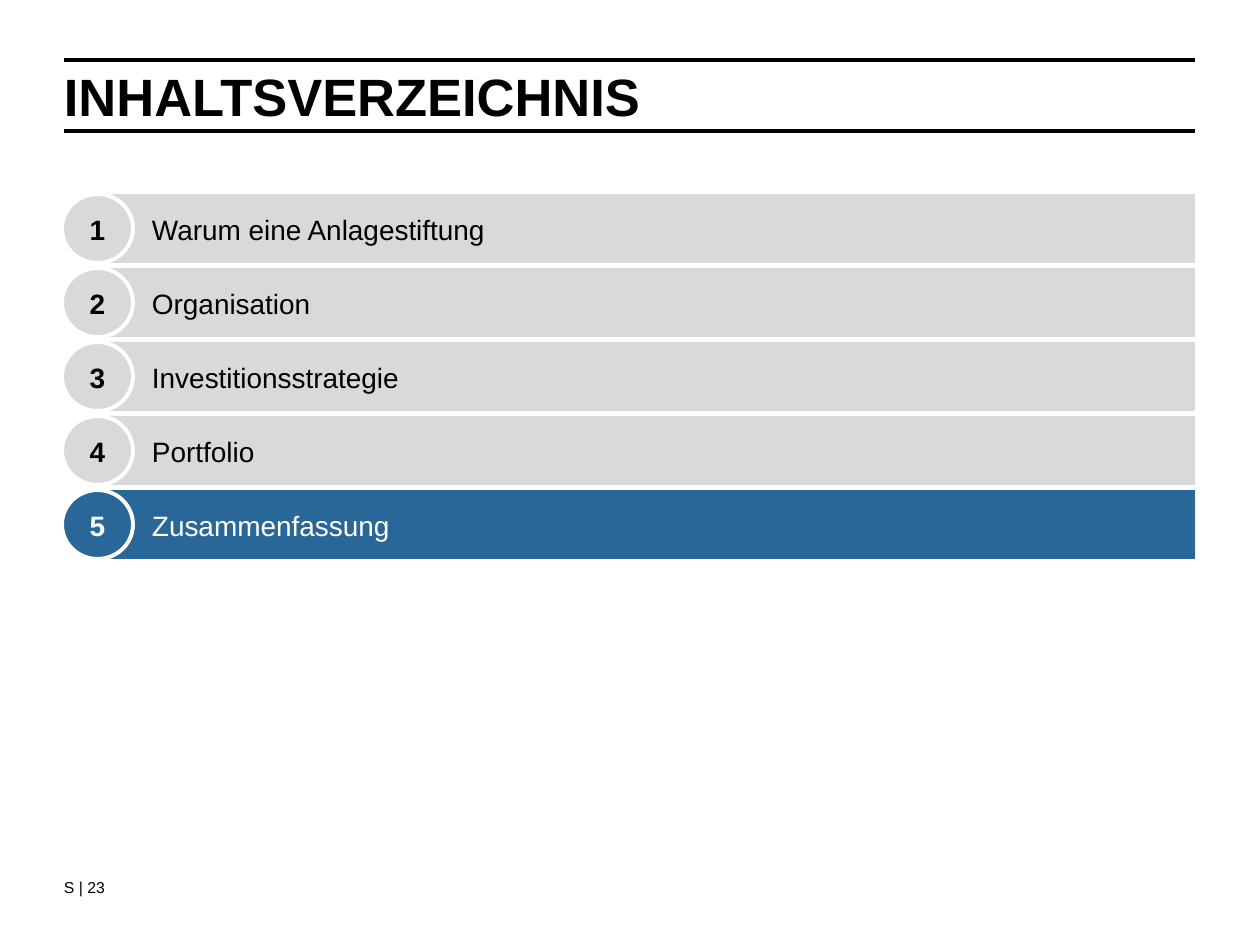
import pptx
import pptx.util
import pptx.dml.color
import pptx.enum.shapes
import pptx.enum.text
import pptx.oxml.ns
from lxml import etree

SCALE = 914400 / 126
COLORS = {"black": "000000", "white": "FFFFFF", "grey": "D9D9D9", "blue": "296799"}
SHAPES = pptx.enum.shapes.MSO_SHAPE
ALIGN = pptx.enum.text.PP_ALIGN
ANCHOR = pptx.enum.text.MSO_ANCHOR


def px(*lengths):
    return [pptx.util.Emu(round(length * SCALE)) for length in lengths]


def write(shape, text, size, color, bold, insets, spacing, align, anchor):
    frame = shape.text_frame
    frame.word_wrap = True
    frame.vertical_anchor = anchor
    frame.margin_left, frame.margin_top, frame.margin_right, frame.margin_bottom = px(*insets)
    paragraph = frame.paragraphs[0]
    paragraph.alignment = align
    paragraph.line_spacing = spacing
    run = paragraph.add_run()
    run.text = text
    run.font.name = "Arial"
    run.font.size = pptx.util.Pt(size)
    run.font.bold = bold
    run.font.color.rgb = pptx.dml.color.RGBColor.from_string(COLORS[color])


deck = pptx.Presentation()
deck.slide_width, deck.slide_height = px(1260, 945)
slide = deck.slides.add_slide(deck.slide_layouts[6])

for rule_y in (60, 131):
    rule = slide.shapes.add_connector(
        pptx.enum.shapes.MSO_CONNECTOR.STRAIGHT, *px(64, rule_y, 1195, rule_y))
    rule.line.width = pptx.util.Pt(2.8)
    rule.line.color.rgb = pptx.dml.color.RGBColor.from_string(COLORS["black"])
    etree.SubElement(rule._element.spPr, pptx.oxml.ns.qn("a:effectLst"))

heading = slide.shapes.add_textbox(*px(64, 71, 1131, 49))
write(heading, "INHALTSVERZEICHNIS", 30, "black", True, (0, 4, 0, 0),
      pptx.util.Pt(30), ALIGN.LEFT, ANCHOR.TOP)

page_number = slide.shapes.add_textbox(*px(64, 874, 95, 35))
write(page_number, "S | 23", 9, "black", False, (0, 3, 0, 0),
      1.06, ALIGN.LEFT, ANCHOR.TOP)

chapters = ["Warum eine Anlagestiftung", "Organisation", "Investitionsstrategie",
            "Portfolio", "Zusammenfassung"]
current_chapter = 5
first_top, pitch, row_height = 194, 74, 69

for number, chapter in enumerate(chapters, start=1):
    top = first_top + (number - 1) * pitch
    is_current = number == current_chapter
    fill, ink = ("blue", "white") if is_current else ("grey", "black")

    bar = slide.shapes.add_shape(SHAPES.RECTANGLE, *px(98, top, 1097, row_height))
    bar.line.fill.background()
    write(bar, chapter, 16, ink, False, (54, 5, 5, 5), 1.06, ALIGN.LEFT, ANCHOR.MIDDLE)

    badge = slide.shapes.add_shape(SHAPES.OVAL, *px(62, top, 71, row_height))
    badge.line.width = pptx.util.Pt(2.25)
    badge.line.color.rgb = pptx.dml.color.RGBColor.from_string(COLORS["white"])
    write(badge, str(number), 16, ink, True, (5, 5, 5, 5), 1.06, ALIGN.CENTER, ANCHOR.MIDDLE)

    for part in (bar, badge):
        part.shadow.inherit = False
        part.fill.solid()
        part.fill.fore_color.rgb = pptx.dml.color.RGBColor.from_string(COLORS[fill])

deck.save("out.pptx")
